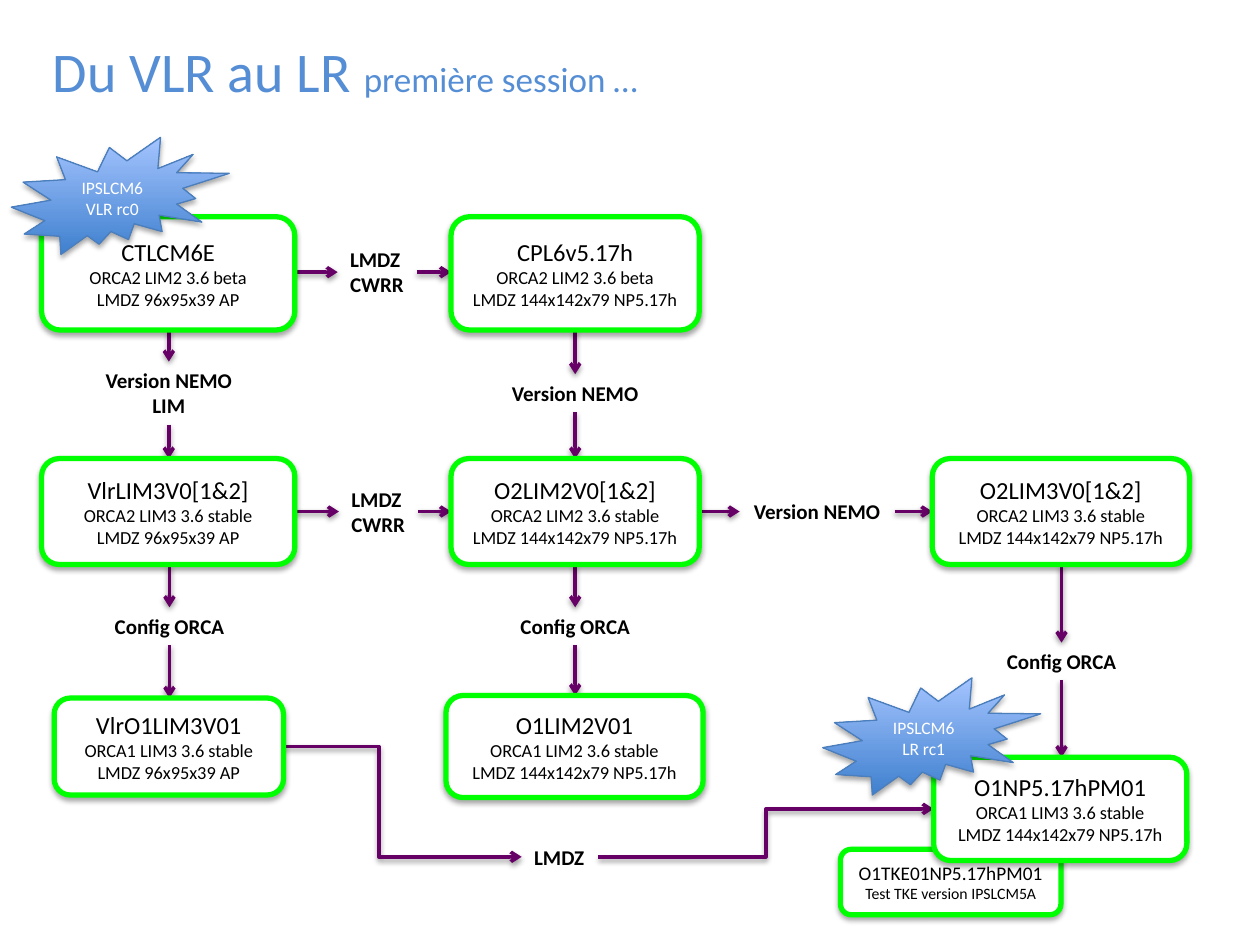
"""Build the flow chart of model configurations from VLR to LR."""
from dataclasses import dataclass

from pptx import Presentation
from pptx.dml.color import RGBColor
from pptx.enum.shapes import MSO_CONNECTOR, MSO_SHAPE
from pptx.enum.text import MSO_ANCHOR, MSO_AUTO_SIZE, PP_ALIGN
from pptx.oxml.ns import qn
from pptx.util import Inches, Pt
from lxml.etree import SubElement

FONT = "Calibri"
BLACK = RGBColor(0x00, 0x00, 0x00)
WHITE = RGBColor(0xFF, 0xFF, 0xFF)
GREEN = RGBColor(0x00, 0xFF, 0x00)
PURPLE = RGBColor(0x66, 0x00, 0x66)
TITLE_BLUE = RGBColor(0x55, 0x8E, 0xD5)
SEAL_DARK = RGBColor(0x3F, 0x80, 0xCE)
SEAL_LIGHT = RGBColor(0xA4, 0xC4, 0xFF)
SEAL_LINE = RGBColor(0x4B, 0x7E, 0xBC)
LR_GRID = "LMDZ 144x142x79 NP5.17h"
VLR_GRID = "LMDZ 96x95x39 AP"


@dataclass(frozen=True)
class Node:
    left: float
    top: float
    width: float
    height: float
    lines: tuple[str, ...]
    sizes: tuple[float, ...] = (14, 10.5, 10.5)
    align: PP_ALIGN = PP_ALIGN.CENTER

    @property
    def right(self) -> float:
        return self.left + self.width

    @property
    def bottom(self) -> float:
        return self.top + self.height

    @property
    def center(self) -> float:
        return self.left + self.width / 2

    @property
    def middle(self) -> float:
        return self.top + self.height / 2

    @property
    def frame(self) -> tuple:
        return tuple(Inches(value) for value in (self.left, self.top, self.width, self.height))


def label(left: float, top: float, width: float, *lines: str, align: PP_ALIGN = PP_ALIGN.CENTER) -> Node:
    return Node(left, top, width, 0.1 + 0.2 * len(lines), lines, (12, 12), align)


def add_shadow(properties, distance: float, opacity: int) -> None:
    effects = properties.find(qn("a:effectLst"))
    if effects is None:
        effects = SubElement(properties, qn("a:effectLst"))
    shadow = SubElement(effects, qn("a:outerShdw"), blurRad=str(Pt(3.1)), dist=str(Pt(distance)),
                        dir="5400000", rotWithShape="0")
    color = SubElement(shadow, qn("a:srgbClr"), val="000000")
    SubElement(color, qn("a:alpha"), val=str(opacity * 1000))


def write_lines(text_frame, node: Node, color: RGBColor, bold: bool = False) -> None:
    text_frame.text = "\n".join(node.lines)
    for paragraph, size in zip(text_frame.paragraphs, node.sizes):
        paragraph.alignment = node.align
        paragraph.font.name = FONT
        paragraph.font.size = Pt(size)
        paragraph.font.bold = bold
        paragraph.font.color.rgb = color


def add_shape(slide, preset: MSO_SHAPE, node: Node, line: RGBColor, width: float, text: RGBColor):
    shape = slide.shapes.add_shape(preset, *node.frame)
    shape.line.color.rgb = line
    shape.line.width = Pt(width)
    shape.shadow.inherit = False
    add_shadow(shape._element.spPr, 1.8, 35)
    shape.text_frame.word_wrap = True
    shape.text_frame.vertical_anchor = MSO_ANCHOR.MIDDLE
    write_lines(shape.text_frame, node, text)
    return shape


def add_box(slide, node: Node) -> None:
    box = add_shape(slide, MSO_SHAPE.ROUNDED_RECTANGLE, node, GREEN, 3, BLACK)
    box.fill.solid()
    box.fill.fore_color.rgb = WHITE


def add_seal(slide, node: Node) -> None:
    seal = add_shape(slide, MSO_SHAPE.EXPLOSION2, node, SEAL_LINE, 0.75, WHITE)
    seal.fill.gradient()
    seal.fill.gradient_angle = 90
    for stop, color, position in zip(seal.fill.gradient_stops, (SEAL_DARK, SEAL_LIGHT), (0, 1)):
        stop.color.rgb = color
        stop.position = position


def add_label(slide, node: Node) -> None:
    text_frame = slide.shapes.add_textbox(*node.frame).text_frame
    text_frame.word_wrap = False
    text_frame.auto_size = MSO_AUTO_SIZE.SHAPE_TO_FIT_TEXT
    write_lines(text_frame, node, BLACK, bold=True)


def add_arrow(slide, start: tuple[float, float], end: tuple[float, float], bend: float | None = None) -> None:
    kind = MSO_CONNECTOR.STRAIGHT if bend is None else MSO_CONNECTOR.ELBOW
    arrow = slide.shapes.add_connector(kind, *(Inches(value) for value in start + end))
    arrow.line.color.rgb = PURPLE
    arrow.line.width = Pt(2)
    properties = arrow._element.spPr
    SubElement(properties.find(qn("a:ln")), qn("a:tailEnd"), type="arrow")
    add_shadow(properties, 1.6, 38)
    if bend is not None:
        guides = properties.find(qn("a:prstGeom")).get_or_add_avLst()
        SubElement(guides, qn("a:gd"), name="adj1", fmla=f"val {round(bend * 100000)}")


def link_down(slide, first: Node, step: Node, last: Node) -> None:
    add_arrow(slide, (step.center, first.bottom), (step.center, step.top))
    add_arrow(slide, (step.center, step.bottom), (step.center, last.top))


def link_across(slide, first: Node, step: Node, last: Node) -> None:
    add_arrow(slide, (first.right, step.middle), (step.left, step.middle))
    add_arrow(slide, (step.right, step.middle), (last.left, step.middle))


def link_bent(slide, first: Node, step: Node, last: Node) -> None:
    add_arrow(slide, (first.right, first.middle), (step.left, step.middle), 0.4)
    add_arrow(slide, (step.right, step.middle), (last.left, last.middle), 0.5)


def add_title(slide) -> None:
    title = slide.shapes.title
    title.left, title.top, title.width, title.height = (Inches(value) for value in (0.32, 0.13, 9, 0.86))
    title.text_frame.vertical_anchor = MSO_ANCHOR.MIDDLE
    title.text_frame.auto_size = MSO_AUTO_SIZE.NONE
    paragraph = title.text_frame.paragraphs[0]
    paragraph.alignment = PP_ALIGN.LEFT
    paragraph.font.name = FONT
    paragraph.font.color.rgb = TITLE_BLUE
    for text, size in (("Du VLR au LR ", 32), ("première session …", 20)):
        run = paragraph.add_run()
        run.text = text
        run.font.size = Pt(size)


def main() -> None:
    presentation = Presentation()
    presentation.slide_width, presentation.slide_height = Inches(10), Inches(7.5)
    slide = presentation.slides.add_slide(presentation.slide_layouts[5])
    add_title(slide)

    control = Node(0.33, 1.72, 2.01, 0.9, ("CTLCM6E", "ORCA2 LIM2 3.6 beta", VLR_GRID))
    coupled = Node(3.58, 1.72, 1.97, 0.9, ("CPL6v5.17h", "ORCA2 LIM2 3.6 beta", LR_GRID))
    vlr_lim3 = Node(0.33, 3.64, 2.01, 0.84, ("VlrLIM3V0[1&2]", "ORCA2 LIM3 3.6 stable", VLR_GRID))
    lr_lim2 = Node(3.58, 3.64, 1.97, 0.84, ("O2LIM2V0[1&2]", "ORCA2 LIM2 3.6 stable", LR_GRID))
    lr_lim3 = Node(7.4, 3.64, 2.04, 0.84, ("O2LIM3V0[1&2]", "ORCA2 LIM3 3.6 stable", LR_GRID))
    vlr_orca1 = Node(0.43, 5.54, 1.82, 0.77, ("VlrO1LIM3V01", "ORCA1 LIM3 3.6 stable", VLR_GRID))
    lr_orca1 = Node(3.54, 5.52, 2.04, 0.81, ("O1LIM2V01", "ORCA1 LIM2 3.6 stable", LR_GRID))
    final = Node(7.41, 6.01, 2.01, 0.82, ("O1NP5.17hPM01", "ORCA1 LIM3 3.6 stable", LR_GRID))
    tke_test = Node(6.67, 6.74, 1.75, 0.52, ("O1TKE01NP5.17hPM01", "Test TKE version IPSLCM5A"), (11, 9))
    boxes = (tke_test, control, coupled, vlr_lim3, lr_lim2, lr_lim3, vlr_orca1, lr_orca1, final)

    links = (
        (link_down, control, label(0.59, 2.87, 1.5, "Version NEMO", "LIM"), vlr_lim3),
        (link_down, coupled, label(3.95, 2.97, 1.23, "Version NEMO"), lr_lim2),
        (link_down, vlr_lim3, label(0.8, 4.82, 1.09, "Config ORCA"), vlr_orca1),
        (link_down, lr_lim2, label(4.02, 4.82, 1.09, "Config ORCA"), lr_orca1),
        (link_down, lr_lim3, label(7.88, 5.1, 1.09, "Config ORCA"), final),
        (link_across, control, label(2.68, 1.91, 0.63, "LMDZ", "CWRR", align=PP_ALIGN.LEFT), coupled),
        (link_across, vlr_lim3, label(2.69, 3.81, 0.63, "LMDZ", "CWRR", align=PP_ALIGN.LEFT), lr_lim2),
        (link_across, lr_lim2, label(5.87, 3.91, 1.23, "Version NEMO"), lr_lim3),
        (link_bent, vlr_orca1, label(4.14, 6.65, 0.61, "LMDZ", align=PP_ALIGN.LEFT), final),
    )
    for draw_link, first, step, last in links:
        draw_link(slide, first, step, last)
    for box in boxes:
        add_box(slide, box)
    for _, _, step, _ in links:
        add_label(slide, step)
    for left, top, release in ((0.09, 1.09, "VLR rc0"), (6.53, 5.38, "LR rc1")):
        add_seal(slide, Node(left, top, 1.73, 0.93, (f"IPSLCM6 {release}",), (10,)))

    presentation.save("out.pptx")


if __name__ == "__main__":
    main()
